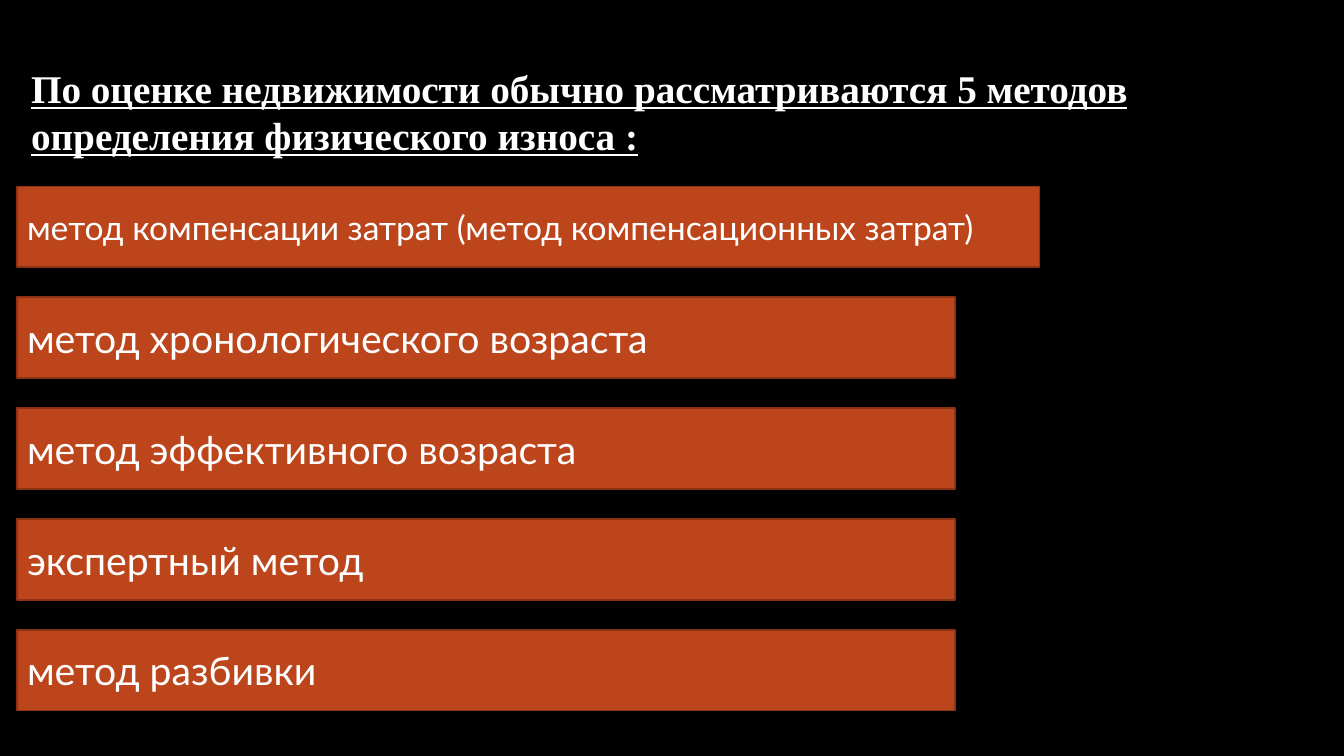
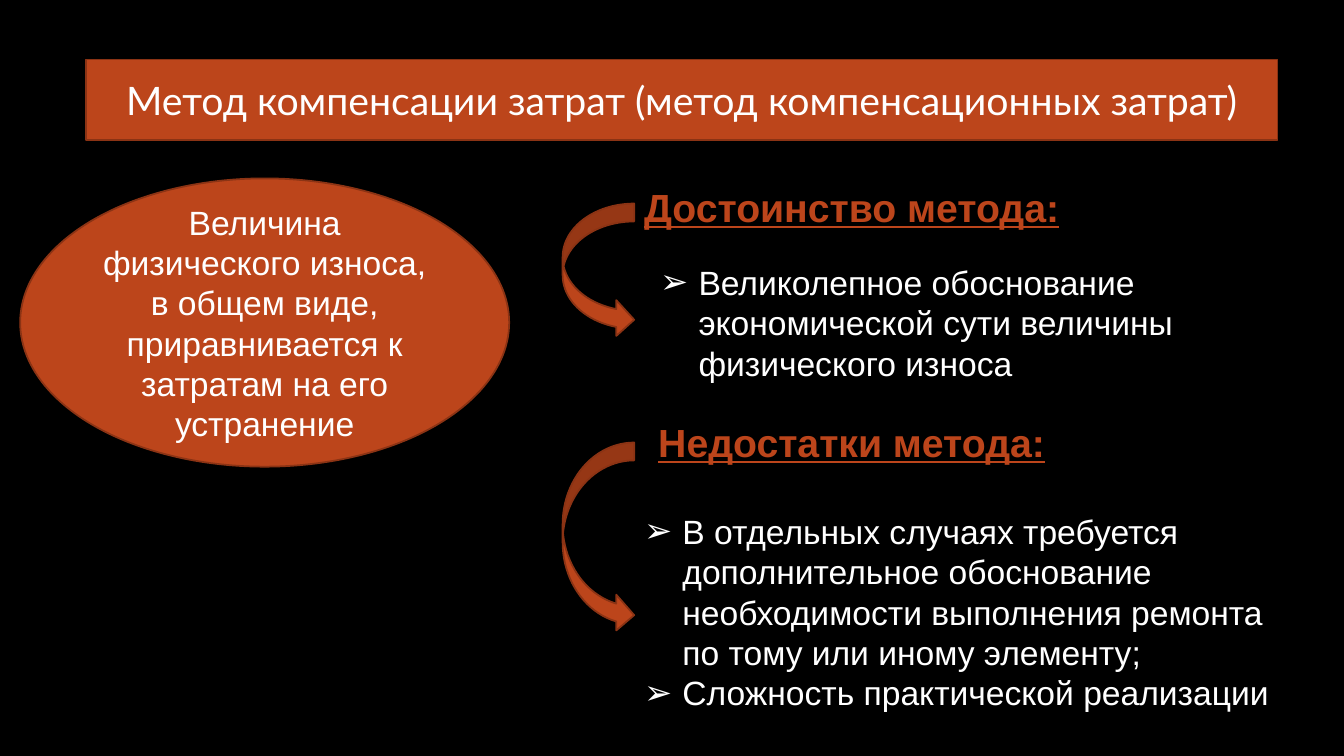
from lxml.etree import SubElement
from pptx import Presentation
from pptx.dml.color import RGBColor
from pptx.enum.shapes import MSO_SHAPE as Preset
from pptx.enum.text import MSO_ANCHOR as Anchor, MSO_AUTO_SIZE as AutoSize, PP_ALIGN as Align
from pptx.oxml.ns import qn
from pptx.util import Inches, Pt

BLACK, WHITE, RUST, DARK_RUST = "000000", "FFFFFF", "BC451B", "8B3314"
LABEL = {"name": "Lato", "size": Pt(28)}
LONG_LABEL = LABEL | {"size": Pt(24)}
TITLE = {"name": "Times New Roman", "size": Pt(28), "bold": True, "underline": True}
HEADING = TITLE | {"name": "Arial"}
BODY = {"name": "Arial", "size": Pt(24)}

METHODS = [
    "метод компенсации затрат (метод компенсационных затрат)",
    "метод хронологического возраста",
    "метод эффективного возраста",
    "экспертный метод",
    "метод разбивки",
]
ADVANTAGES = ["Великолепное обоснование экономической сути величины физического износа"]
DRAWBACKS = [
    "В отдельных случаях требуется дополнительное обоснование необходимости "
    "выполнения ремонта по тому или иному элементу;",
    "Сложность практической реализации",
]


def rgb(value):
    """Turn a hex string into a colour."""
    return RGBColor.from_string(value)


def write(paragraph, text, style, color=WHITE, align=Align.LEFT):
    """Put one formatted run into a paragraph."""
    paragraph.alignment = align
    run = paragraph.add_run()
    run.text = text
    for attribute, value in style.items():
        setattr(run.font, attribute, value)
    run.font.color.rgb = rgb(color)


def indent(paragraph, left, first=0, bullet=None):
    """Indent a paragraph and give it a bullet if one is named."""
    properties = paragraph._p.get_or_add_pPr()
    properties.set("marL", str(Inches(left)))
    properties.set("indent", str(Inches(first)))
    if bullet:
        SubElement(properties, qn("a:buFont")).set("typeface", "Arial")
        SubElement(properties, qn("a:buChar")).set("char", bullet)


def add_panel(slide, preset, box, text="", style=LABEL, align=Align.LEFT):
    """Draw a rust-coloured shape with optional centred-height text."""
    panel = slide.shapes.add_shape(preset, *map(Inches, box))
    panel.shadow.inherit = False
    panel.fill.solid()
    panel.fill.fore_color.rgb = rgb(RUST)
    panel.line.color.rgb = rgb(DARK_RUST)
    panel.line.width = Pt(1.25)
    if text:
        panel.text_frame.word_wrap = True
        panel.text_frame.vertical_anchor = Anchor.MIDDLE
        write(panel.text_frame.paragraphs[0], text, style, align=align)


def add_frame(slide, box, wrap=True):
    """Add a text box that grows with its text and return its frame."""
    frame = slide.shapes.add_textbox(*map(Inches, box)).text_frame
    frame.word_wrap = wrap
    frame.auto_size = AutoSize.SHAPE_TO_FIT_TEXT
    return frame


def add_heading(slide, box, text):
    """Add an underlined one-line heading."""
    write(add_frame(slide, box, wrap=False).paragraphs[0], text, HEADING, RUST)


def add_points(slide, box, points):
    """Add a list with arrow bullets."""
    frame = add_frame(slide, box)
    for number, point in enumerate(points):
        paragraph = frame.add_paragraph() if number else frame.paragraphs[0]
        indent(paragraph, 0.38, -0.38, "➢")
        write(paragraph, point, BODY)


def build_methods(slide):
    """List the five methods as stacked bars."""
    title = add_frame(slide, (0.17, 0.59, 12.83, 1.04)).paragraphs[0]
    indent(title, 0.04)
    write(title, "По оценке недвижимости обычно рассматриваются 5 методов "
                 "определения физического износа :", TITLE)
    for row, method in enumerate(METHODS):
        width, style = (9.3, LABEL) if row else (10.14, LONG_LABEL)
        add_panel(slide, Preset.RECTANGLE, (0.17, 1.85 + 1.1 * row, width, 0.8), method, style)


def build_compensation(slide):
    """Explain the compensation method with its pros and cons."""
    add_panel(slide, Preset.RECTANGLE, (0.85, 0.59, 11.82, 0.8),
              "Метод компенсации затрат (метод компенсационных затрат)", align=Align.CENTER)
    add_panel(slide, Preset.OVAL, (0.2, 1.77, 4.85, 2.86),
              "Величина физического износа, в общем виде, приравнивается к затратам "
              "на его устранение", BODY, Align.CENTER)
    add_heading(slide, (6.29, 1.77, 4.37, 0.57), "Достоинство метода:")
    add_points(slide, (6.45, 2.55, 6.67, 1.31), ADVANTAGES)
    add_heading(slide, (6.43, 4.1, 4.09, 0.57), "Недостатки метода:")
    add_points(slide, (6.29, 5.02, 6.67, 2.12), DRAWBACKS)
    for top, height in ((2.02, 1.33), (4.39, 1.89)):
        add_panel(slide, Preset.CURVED_RIGHT_ARROW, (5.58, top, 0.71, height))


def main():
    """Build and save the presentation."""
    deck = Presentation()
    deck.slide_width, deck.slide_height = Inches(13.33), Inches(7.5)
    backdrop = deck.slide_master.background.fill
    backdrop.solid()
    backdrop.fore_color.rgb = rgb(BLACK)
    for build in (build_methods, build_compensation):
        build(deck.slides.add_slide(deck.slide_layouts[6]))
    deck.save("out.pptx")


if __name__ == "__main__":
    main()
